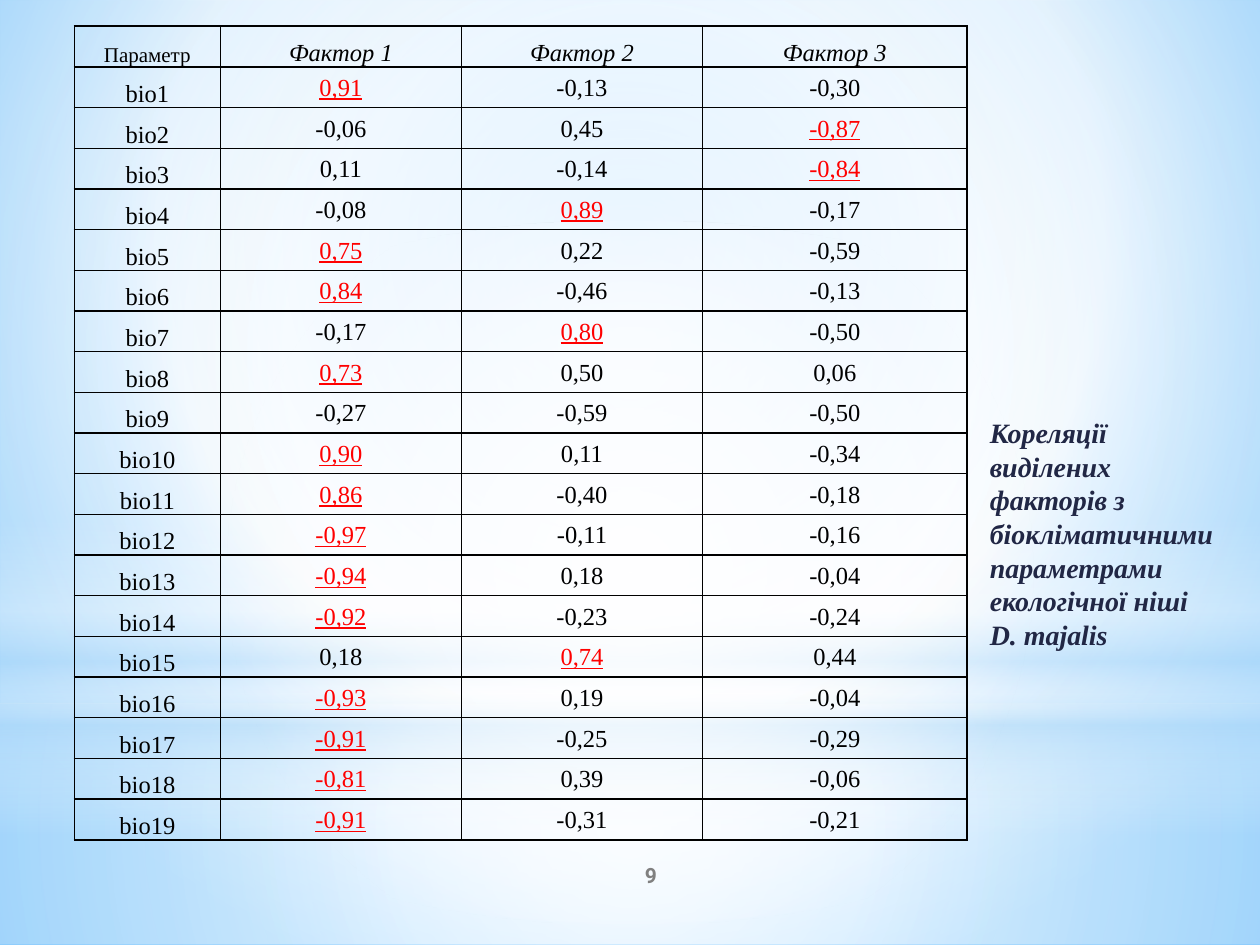
"""Build the slide of factor correlations with bioclimatic parameters."""
from dataclasses import dataclass

from lxml.etree import SubElement
from pptx import Presentation
from pptx.dml.color import RGBColor
from pptx.enum.shapes import MSO_SHAPE
from pptx.enum.text import MSO_ANCHOR, PP_ALIGN
from pptx.oxml.ns import qn
from pptx.util import Pt


@dataclass(frozen=True)
class Theme:
    serif: str = "Times New Roman"
    sans: str = "Roboto"
    ink: str = "000000"
    strong: str = "FF0000"
    caption: str = "212745"
    muted: str = "808080"
    white: str = "FFFFFF"
    haze: str = "B4DCFA"
    sky: str = "9ED5FF"
    edge: str = "5BB9FF"
    small: int = 12
    body: int = 14
    large: int = 16


THEME = Theme()
STRONG_LIMIT = 0.7
CENTRE = (50, 50, 50, 50)
HEADINGS = ("Параметр", "Фактор 1", "Фактор 2", "Фактор 3")
CORRELATIONS = (
    ("0,91", "-0,13", "-0,30"),
    ("-0,06", "0,45", "-0,87"),
    ("0,11", "-0,14", "-0,84"),
    ("-0,08", "0,89", "-0,17"),
    ("0,75", "0,22", "-0,59"),
    ("0,84", "-0,46", "-0,13"),
    ("-0,17", "0,80", "-0,50"),
    ("0,73", "0,50", "0,06"),
    ("-0,27", "-0,59", "-0,50"),
    ("0,90", "0,11", "-0,34"),
    ("0,86", "-0,40", "-0,18"),
    ("-0,97", "-0,11", "-0,16"),
    ("-0,94", "0,18", "-0,04"),
    ("-0,92", "-0,23", "-0,24"),
    ("0,18", "0,74", "0,44"),
    ("-0,93", "0,19", "-0,04"),
    ("-0,91", "-0,25", "-0,29"),
    ("-0,81", "0,39", "-0,06"),
    ("-0,91", "-0,31", "-0,21"),
)
CAPTION = (
    "Кореляції виділених факторів з біокліматичними параметрами екологічної ніші\n"
    "D. majalis"
)


def write(frame, text, size=THEME.body, font=THEME.serif, color=THEME.ink, bold=False,
          italic=False, underline=False, align=PP_ALIGN.LEFT, spacing=1.0):
    for index, line in enumerate(text.split("\n")):
        paragraph = frame.add_paragraph() if index else frame.paragraphs[0]
        paragraph.alignment = align
        paragraph.line_spacing = spacing
        run = paragraph.add_run()
        run.text = line
        run.font.size = Pt(size)
        run.font.name = font
        run.font.color.rgb = RGBColor.from_string(color)
        run.font.bold = bold
        run.font.italic = italic
        run.font.underline = underline


def paint_gradient(fill, owner, stops, focus=None, angle=0):
    fill.gradient()
    gradient = owner.find(".//" + qn("a:gradFill"))
    for child in list(gradient):
        gradient.remove(child)
    stop_list = SubElement(gradient, qn("a:gsLst"))
    for position, color, opacity in stops:
        stop = SubElement(stop_list, qn("a:gs"), pos=str(position * 1000))
        tint = SubElement(stop, qn("a:srgbClr"), val=color)
        if opacity < 100:
            SubElement(tint, qn("a:alpha"), val=str(opacity * 1000))
    if focus:
        circle = SubElement(gradient, qn("a:path"), path="circle")
        sides = {side: str(inset * 1000) for side, inset in zip("ltrb", focus)}
        SubElement(circle, qn("a:fillToRect"), **sides)
    else:
        SubElement(gradient, qn("a:lin"), ang=str(angle * 60000), scaled="0")


class SlideBuilder:
    def __init__(self, slide, theme):
        self.slide = slide
        self.theme = theme

    def backdrop(self, stops, focus):
        paint_gradient(self.slide.background.fill, self.slide.element, stops, focus)

    def glow(self, box, stops, kind=MSO_SHAPE.RECTANGLE, focus=None, angle=0):
        shape = self.slide.shapes.add_shape(kind, *map(Pt, box))
        shape.shadow.inherit = False
        shape.line.fill.background()
        paint_gradient(shape.fill, shape.element, stops, focus, angle)

    def text(self, box, content, anchor=MSO_ANCHOR.TOP, **style):
        frame = self.slide.shapes.add_textbox(*map(Pt, box)).text_frame
        frame.word_wrap = True
        frame.vertical_anchor = anchor
        write(frame, content, **style)

    def border(self, cell):
        properties = cell._tc.get_or_add_tcPr()
        for index, side in enumerate(("lnL", "lnR", "lnT", "lnB")):
            line = properties.makeelement(qn("a:" + side), {"w": str(Pt(1))})
            solid = SubElement(line, qn("a:solidFill"))
            SubElement(solid, qn("a:srgbClr"), val=self.theme.ink)
            properties.insert(index, line)

    def cell(self, cell, content, anchor=MSO_ANCHOR.MIDDLE, **style):
        cell.margin_left = cell.margin_right = Pt(3.6)
        cell.margin_top = cell.margin_bottom = Pt(0)
        cell.vertical_anchor = anchor
        cell.fill.background()
        self.border(cell)
        write(cell.text_frame, content, align=PP_ALIGN.CENTER, **style)

    def correlation_table(self, left, top, widths, row_height):
        row_count = len(CORRELATIONS) + 1
        table = self.slide.shapes.add_table(
            row_count, len(widths), Pt(left), Pt(top),
            Pt(sum(widths)), Pt(row_height * row_count)).table
        table.first_row = table.horz_banding = False
        for column, width in zip(table.columns, widths):
            column.width = Pt(width)
        for row in table.rows:
            row.height = Pt(row_height)
        self.cell(table.cell(0, 0), HEADINGS[0], MSO_ANCHOR.BOTTOM,
                  size=self.theme.small, spacing=1.5)
        for column, heading in enumerate(HEADINGS[1:], 1):
            self.cell(table.cell(0, column), heading, MSO_ANCHOR.TOP,
                      italic=True, spacing=1.5)
        for row, values in enumerate(CORRELATIONS, 1):
            self.cell(table.cell(row, 0), f"bio{row}", spacing=1.5)
            for column, value in enumerate(values, 1):
                strong = abs(float(value.replace(",", "."))) >= STRONG_LIMIT
                self.cell(table.cell(row, column), value, spacing=1.06, underline=strong,
                          color=self.theme.strong if strong else self.theme.ink)


def main():
    deck = Presentation()
    deck.slide_width, deck.slide_height = Pt(720), Pt(540)
    builder = SlideBuilder(deck.slides.add_slide(deck.slide_layouts[6]), THEME)
    white, haze = THEME.white, THEME.haze

    builder.backdrop([(0, THEME.sky, 100), (60, white, 100), (100, THEME.edge, 100)],
                     focus=(20, 10, 20, 60))
    builder.glow((0, 402, 720, 138), [(0, white, 91), (37, white, 76), (100, haze, 79)],
                 focus=CENTRE)
    builder.glow((0, 0, 720, 402), [(0, white, 89), (48, white, 62), (100, haze, 79)],
                 focus=CENTRE)
    builder.glow((0, 297, 720, 180),
                 [(0, white, 0), (29, white, 30), (45, haze, 40),
                  (55, white, 26), (65, haze, 60), (100, white, 0)], angle=90)
    builder.glow((0, 126, 720, 402), [(0, white, 100), (56, white, 0)],
                 kind=MSO_SHAPE.OVAL, focus=CENTRE)

    builder.correlation_table(42.5, 15, (83.5, 137.75, 137.75, 151.25), 23.26)
    builder.text((558.5, 234, 153.5, 143), CAPTION, size=THEME.large,
                 color=THEME.caption, bold=True, italic=True)
    builder.text((300, 486, 144, 28.75), "9", MSO_ANCHOR.MIDDLE, size=THEME.small,
                 font=THEME.sans, color=THEME.muted, bold=True, align=PP_ALIGN.CENTER)
    deck.save("out.pptx")


if __name__ == "__main__":
    main()
